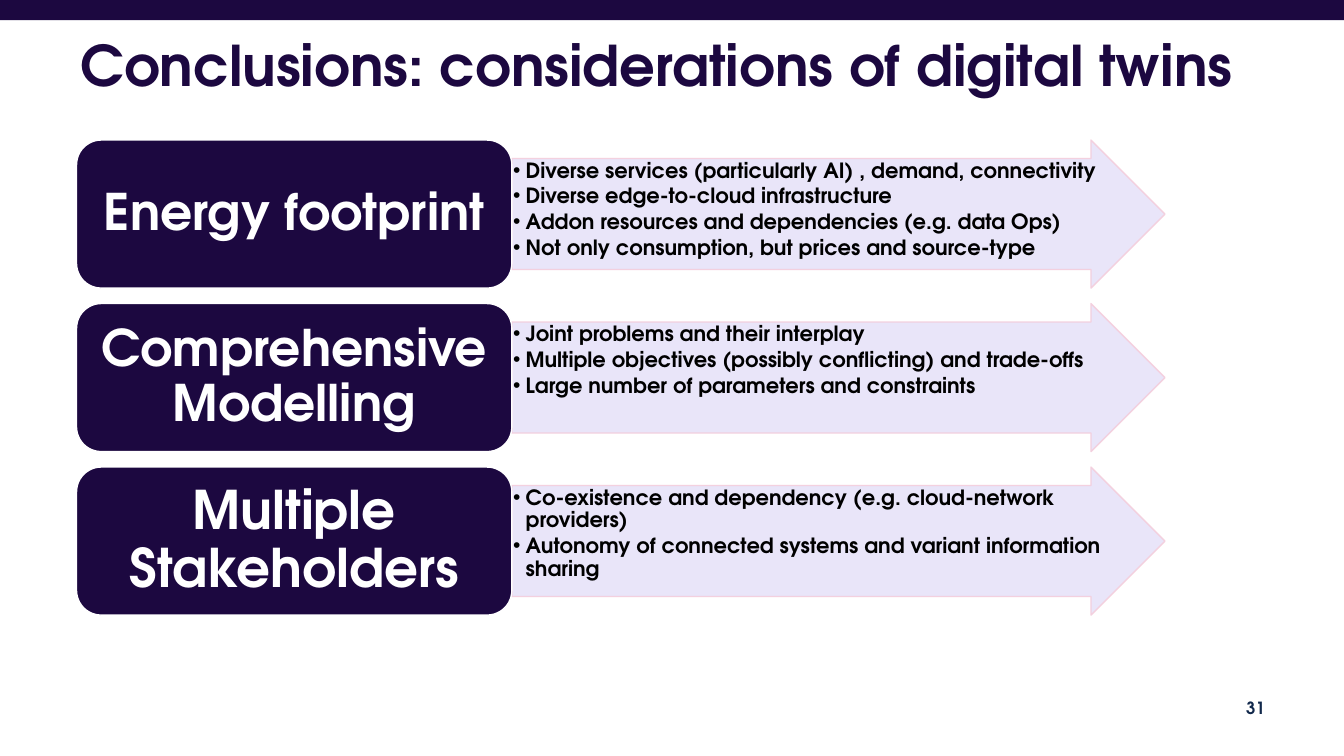
import pptx
import pptx.util
import pptx.dml.color
import pptx.enum.shapes
import pptx.enum.text
import pptx.oxml
import pptx.oxml.ns

Cm = pptx.util.Cm
Pt = pptx.util.Pt
Kind = pptx.enum.shapes.MSO_SHAPE
Side = pptx.enum.text.PP_ALIGN
Rest = pptx.enum.text.MSO_ANCHOR

FONT = "TeX Gyre Adventor"
DARK, PALE, PINK, WHITE = "1C0840", "E7E3F9", "F4CDDC", "FFFFFF"
ROWS = [
    ("Energy footprint", 36, [
        "Diverse services (particularly AI) , demand, connectivity",
        "Diverse edge-to-cloud infrastructure",
        "Addon resources and dependencies (e.g. data Ops)",
        "Not only consumption, but prices and source-type",
    ]),
    ("Comprehensive Modelling", 36, [
        "Joint problems and their interplay",
        "Multiple objectives (possibly conflicting) and trade-offs",
        "Large number of parameters and constraints",
    ]),
    ("Multiple Stakeholders", 38, [
        "Co-existence and dependency (e.g. cloud-network providers)",
        "Autonomy of connected systems and variant information sharing",
    ]),
]


def tint(code):
    return pptx.dml.color.RGBColor.from_string(code)


def apply(item, values):
    for name, value in values.items():
        setattr(item, name, value)


def make(tag, **values):
    node = pptx.oxml.parse_xml(f"<a:{tag} {pptx.oxml.ns.nsdecls('a')}/>")
    for name, value in values.items():
        node.set(name, value)
    return node


def fade(shape, share):
    for node in shape._element.spPr.iter(pptx.oxml.ns.qn("a:srgbClr")):
        node.append(make("alpha", val=str(share * 1000)))


def add_block(slide, kind, place, fill, edge=None):
    shape = slide.shapes.add_shape(kind, *map(Cm, place))
    shape.shadow.inherit = False
    shape.fill.solid()
    shape.fill.fore_color.rgb = tint(fill)
    if edge:
        shape.line.color.rgb = tint(edge)
        shape.line.width = Pt(1)
    else:
        shape.line.fill.background()
    return shape


def write(frame, lines, size, color, look, rest=Rest.MIDDLE, dot=False, **gaps):
    apply(frame, {"word_wrap": True, "vertical_anchor": rest})
    apply(frame, {f"margin_{side}": Cm(gap) for side, gap in gaps.items()})
    for index, line in enumerate(lines):
        para = frame.paragraphs[0] if index == 0 else frame.add_paragraph()
        apply(para, look)
        if dot:
            props = para._p.get_or_add_pPr()
            props.set("marL", str(Cm(0.32)))
            props.set("indent", str(Cm(-0.32)))
            props.append(make("buFont", typeface="Arial"))
            props.append(make("buChar", char="•"))
        run = para.add_run()
        run.text = line
        apply(run.font, {"name": FONT, "size": Pt(size), "bold": True})
        run.font.color.rgb = tint(color)


def add_text(slide, place, lines, size, color, look, *rest, **gaps):
    box = slide.shapes.add_textbox(*map(Cm, place))
    write(box.text_frame, lines, size, color, look, *rest, **gaps)


def add_row(slide, top, head, size, points):
    arrow = add_block(slide, Kind.RIGHT_ARROW, (12.9, top, 16.46, 3.73), PALE, PINK)
    arrow.adjustments[0] = 0.75
    arrow.adjustments[1] = 0.5
    fade(arrow, 90)
    look = {"alignment": Side.LEFT, "line_spacing": 0.9, "space_after": Pt(2.25)}
    add_text(slide, (12.9, top + 0.47, 15.04, 2.82), points, 15, "000000", look,
             Rest.TOP, True, left=0.03, top=0.03, right=0.03, bottom=0.03)
    card = add_block(slide, Kind.ROUNDED_RECTANGLE, (1.93, top, 10.97, 3.73), DARK, WHITE)
    look = {"alignment": Side.CENTER, "line_spacing": 0.9}
    write(card.text_frame, [head], size, WHITE, look,
          left=0.38, top=0.19, right=0.38, bottom=0.19)


def main():
    deck = pptx.Presentation()
    apply(deck, {"slide_width": Cm(33.87), "slide_height": Cm(19.05)})
    slide = deck.slides.add_slide(deck.slide_layouts[6])
    add_block(slide, Kind.RECTANGLE, (0, 0, 33.87, 0.51), DARK)
    add_text(slide, (24.51, 17.32, 7.62, 1.02), ["31"], 12, "11284B",
             {"alignment": Side.RIGHT})
    add_text(slide, (1.78, 0.51, 32.09, 2.44),
             ["Conclusions: considerations of digital twins"], 40, DARK,
             {"alignment": Side.LEFT, "line_spacing": 0.9})
    for index, (head, size, points) in enumerate(ROWS):
        add_row(slide, 3.53 + index * 4.12, head, size, points)
    deck.save("out.pptx")


if __name__ == "__main__":
    main()
